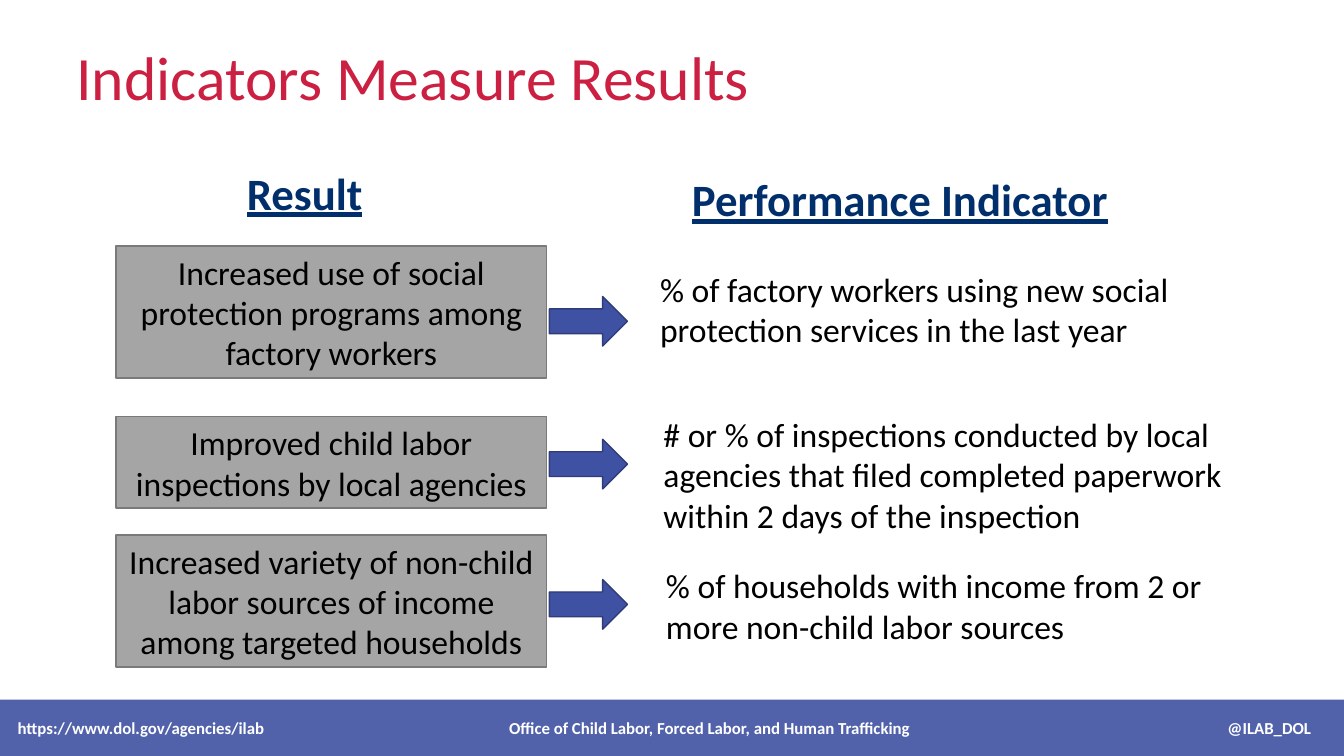
from dataclasses import dataclass

from lxml import etree
from pptx import Presentation
from pptx import util as u
from pptx.dml.color import RGBColor
from pptx.enum import shapes, text
from pptx.oxml.ns import qn


@dataclass(frozen=True)
class Theme:
    font: str = "Calibri"
    title: str = "CB2042"
    heading: str = "002F6C"
    body: str = "000000"
    light: str = "FFFFFF"
    box: str = "A5A5A5"
    box_line: str = "7A7A7A"
    accent: str = "3F51A2"
    accent_line: str = "2F3C78"
    title_size: int = 44
    heading_size: int = 32
    body_size: int = 24
    footer_size: int = 12


class SlideBuilder:
    """Draws styled elements on a slide with a grid of 160 columns by 90 rows."""

    def __init__(self, presentation, theme):
        self.theme = theme
        self.column = presentation.slide_width / 160
        self.row = presentation.slide_height / 90
        self.slide = presentation.slides.add_slide(presentation.slide_layouts[5])

    def area(self, left, top, width, height):
        return (round(left * self.column), round(top * self.row),
                round(width * self.column), round(height * self.row))

    def set_words(self, shape, words, color, size, align=text.PP_ALIGN.LEFT,
                  anchor=text.MSO_ANCHOR.TOP, **font_values):
        frame = shape.text_frame
        frame_values = {"word_wrap": True, "auto_size": text.MSO_AUTO_SIZE.NONE,
                        "vertical_anchor": anchor}
        for name, value in frame_values.items():
            setattr(frame, name, value)
        paragraph = frame.paragraphs[0]
        paragraph.alignment = align
        run = paragraph.add_run()
        run.text = words
        font_values.update(name=self.theme.font, size=u.Pt(size))
        for name, value in font_values.items():
            setattr(run.font, name, value)
        run.font.color.rgb = RGBColor.from_string(color)
        return paragraph

    def title(self, words, *cells):
        shape = self.slide.shapes.title
        shape.left, shape.top, shape.width, shape.height = self.area(*cells)
        paragraph = self.set_words(shape, words, self.theme.title,
                                   self.theme.title_size,
                                   anchor=text.MSO_ANCHOR.BOTTOM)
        paragraph.line_spacing = 0.9

    def label(self, words, *cells, heading=False):
        shape = self.slide.shapes.add_textbox(*self.area(*cells))
        if heading:
            self.set_words(shape, words, self.theme.heading, self.theme.heading_size,
                           bold=True, underline=True)
        else:
            self.set_words(shape, words, self.theme.body, self.theme.body_size)

    def block(self, kind, fill, line, *cells):
        shape = self.slide.shapes.add_shape(kind, *self.area(*cells))
        shape.shadow.inherit = False
        shape.fill.solid()
        shape.fill.fore_color.rgb = RGBColor.from_string(fill)
        if line:
            shape.line.color.rgb = RGBColor.from_string(line)
            shape.line.width = u.Pt(1)
        else:
            shape.line.fill.background()
        return shape

    def box(self, words, *cells):
        shape = self.block(shapes.MSO_SHAPE.RECTANGLE, self.theme.box,
                           self.theme.box_line, *cells)
        self.set_words(shape, words, self.theme.body, self.theme.body_size,
                       text.PP_ALIGN.CENTER, text.MSO_ANCHOR.MIDDLE)

    def arrow(self, *cells):
        self.block(shapes.MSO_SHAPE.RIGHT_ARROW, self.theme.accent,
                   self.theme.accent_line, *cells)

    def footer(self, parts, tabs, margin, *cells):
        shape = self.block(shapes.MSO_SHAPE.RECTANGLE, self.theme.accent, None, *cells)
        color = shape.element.spPr.find(qn("a:solidFill"))[0]
        etree.SubElement(color, qn("a:alpha"), val="90000")
        paragraph = self.set_words(shape, "\t".join(parts), self.theme.light,
                                   self.theme.footer_size,
                                   anchor=text.MSO_ANCHOR.MIDDLE, bold=True)
        shape.text_frame.margin_left = round(margin * self.column)
        tab_list = etree.SubElement(paragraph._p.get_or_add_pPr(), qn("a:tabLst"))
        for column, align in tabs:
            position = round((column - margin) * self.column)
            etree.SubElement(tab_list, qn("a:tab"), pos=str(position), algn=align)


RESULTS = [
    ("Increased use of social protection programs among factory workers",
     (29.3, 15.7), 35.3,
     "% of factory workers using new social protection services in the last year",
     (77.4, 31.4, 69.6, 10.9)),
    ("Improved child labor inspections by local agencies",
     (49.6, 10.9), 52.3,
     "# or % of inspections conducted by local agencies that filed completed "
     "paperwork within 2 days of the inspection",
     (77.8, 48.7, 75, 15.7)),
    ("Increased variety of non-child labor sources of income among targeted households",
     (63.7, 15.7), 69,
     "% of households with income from 2 or more non-child labor sources",
     (78.1, 66.7, 70.2, 10.9)),
]


def main():
    presentation = Presentation()
    presentation.slide_width = u.Inches(13.33)
    presentation.slide_height = u.Inches(7.5)
    builder = SlideBuilder(presentation, Theme())
    builder.title("Indicators Measure Results", 7.9, 1.6, 135.5, 12.6)
    builder.label("Result", 28.2, 19.1, 44, 7, heading=True)
    builder.label("Performance Indicator", 81.2, 19.9, 62.2, 10.1, heading=True)
    for result, (top, height), arrow_top, indicator, indicator_cells in RESULTS:
        builder.box(result, 13.8, top, 51.3, height)
        builder.arrow(65.4, arrow_top, 9.3, 5.9)
        builder.label(indicator, *indicator_cells)
    builder.footer(
        ["https://www.dol.gov/agencies/ilab",
         "Office of Child Labor, Forced Labor, and Human Trafficking",
         "@ILAB_DOL"],
        [(84.5, "ctr"), (156.1, "r")], 2.1, 0, 83.3, 160, 6.7)
    presentation.save("out.pptx")


if __name__ == "__main__":
    main()
